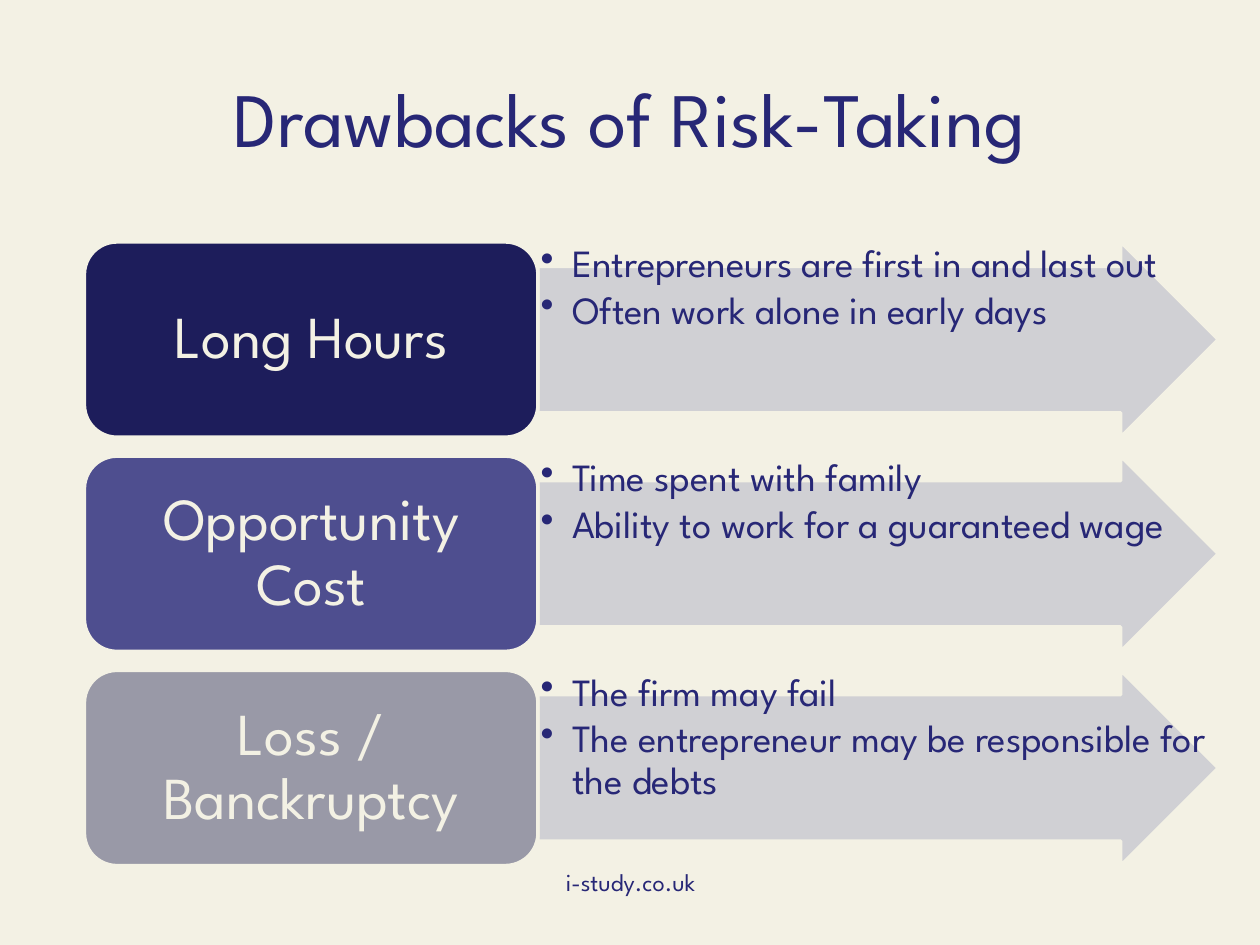
"""Build a slide listing three drawbacks of risk-taking beside block arrows."""
import lxml.etree
import pptx
import pptx.dml.color
import pptx.enum.shapes
import pptx.enum.text
import pptx.oxml.ns
import pptx.util

Inches, Pt = pptx.util.Inches, pptx.util.Pt
SHAPES = pptx.enum.shapes.MSO_SHAPE
CENTER = pptx.enum.text.PP_ALIGN.CENTER
LEFT = pptx.enum.text.PP_ALIGN.LEFT
MIDDLE = pptx.enum.text.MSO_ANCHOR.MIDDLE
TOP = pptx.enum.text.MSO_ANCHOR.TOP

TITLE = "Drawbacks of Risk-Taking"
FOOTER = "i-study.co.uk"
DRAWBACKS = [
    ("Long Hours", "1D1D5B",
     ["Entrepreneurs are first in and last out", "Often work alone in early days"]),
    ("Opportunity Cost", "4E4E8F",
     ["Time spent with family", "Ability to work for a guaranteed wage"]),
    ("Loss / Banckruptcy", "9999A7",
     ["The firm may fail", "The entrepreneur may be responsible for the debts"]),
]
FONT, CREAM, NAVY, ARROW_GREY = "League Spartan", "F3F1E4", "272776", "CDCDD3"
ROWS_TOP, ROW_HEIGHT, ROW_STEP = 1.92, 1.55, 1.7
LABEL_LEFT, LABEL_WIDTH, ARROW_WIDTH = 0.67, 3.6, 5.4


def color(value):
    return pptx.dml.color.RGBColor.from_string(value)


def add_bullet(paragraph):
    properties = paragraph._p.get_or_add_pPr()
    properties.set("marL", str(Inches(0.25)))
    properties.set("indent", str(Inches(-0.25)))
    bullet = lxml.etree.SubElement(properties, pptx.oxml.ns.qn("a:buChar"))
    bullet.set("char", "•")


def write(box, lines, size, ink, align=CENTER, anchor=MIDDLE,
          margins=(0.1, 0.05), bullets=False, spacing=None):
    frame = box.text_frame
    frame.word_wrap = True
    frame.vertical_anchor = anchor
    frame.margin_left = frame.margin_right = Inches(margins[0])
    frame.margin_top = frame.margin_bottom = Inches(margins[1])
    frame.text = "\n".join(lines)
    for paragraph in frame.paragraphs:
        if bullets:
            add_bullet(paragraph)
            paragraph.space_after = Pt(3)
        paragraph.alignment = align
        paragraph.line_spacing = spacing
        paragraph.font.name = FONT
        paragraph.font.size = Pt(size)
        paragraph.font.color.rgb = color(ink)


def add_block(page, kind, place, fill):
    block = page.shapes.add_shape(kind, *place)
    block.shadow.inherit = False
    block.fill.solid()
    block.fill.fore_color.rgb = color(fill)
    block.line.color.rgb = color(CREAM)
    block.line.width = Pt(2)
    return block


def add_arrow(page, place):
    arrow = add_block(page, SHAPES.RIGHT_ARROW, place, ARROW_GREY)
    arrow.adjustments[0], arrow.adjustments[1] = 0.75, 0.5
    fill_color = arrow._element.spPr.find(pptx.oxml.ns.qn("a:solidFill"))[0]
    lxml.etree.SubElement(fill_color, pptx.oxml.ns.qn("a:alpha")).set("val", "90000")


def add_drawback(page, row, label, fill, points):
    top, height = Inches(ROWS_TOP + row * ROW_STEP), Inches(ROW_HEIGHT)
    arrow_place = (Inches(LABEL_LEFT + LABEL_WIDTH), top, Inches(ARROW_WIDTH), height)
    label_place = (Inches(LABEL_LEFT), top, Inches(LABEL_WIDTH), height)
    add_arrow(page, arrow_place)
    write(page.shapes.add_textbox(*arrow_place), points, 22, NAVY, align=LEFT,
          anchor=TOP, margins=(0.02, 0.02), bullets=True, spacing=0.9)
    block = add_block(page, SHAPES.ROUNDED_RECTANGLE, label_place, fill)
    write(block, [label], 34, CREAM, margins=(0.06, 0), spacing=0.9)


def main():
    deck = pptx.Presentation()
    deck.slide_width, deck.slide_height = Inches(10), Inches(7.5)
    page = deck.slides.add_slide(deck.slide_layouts.get_by_name("Title Only"))
    page.background.fill.solid()
    page.background.fill.fore_color.rgb = color(CREAM)

    title = page.shapes.title
    title.left, title.top = Inches(0.5), Inches(0.3)
    title.width, title.height = Inches(9), Inches(1.25)
    write(title, [TITLE], 44, NAVY)

    footer = page.shapes.add_textbox(Inches(3.42), Inches(6.83), Inches(3.17), Inches(0.52))
    write(footer, [FOOTER], 14, NAVY, anchor=TOP)

    for row, drawback in enumerate(DRAWBACKS):
        add_drawback(page, row, *drawback)
    deck.save("out.pptx")


if __name__ == "__main__":
    main()
